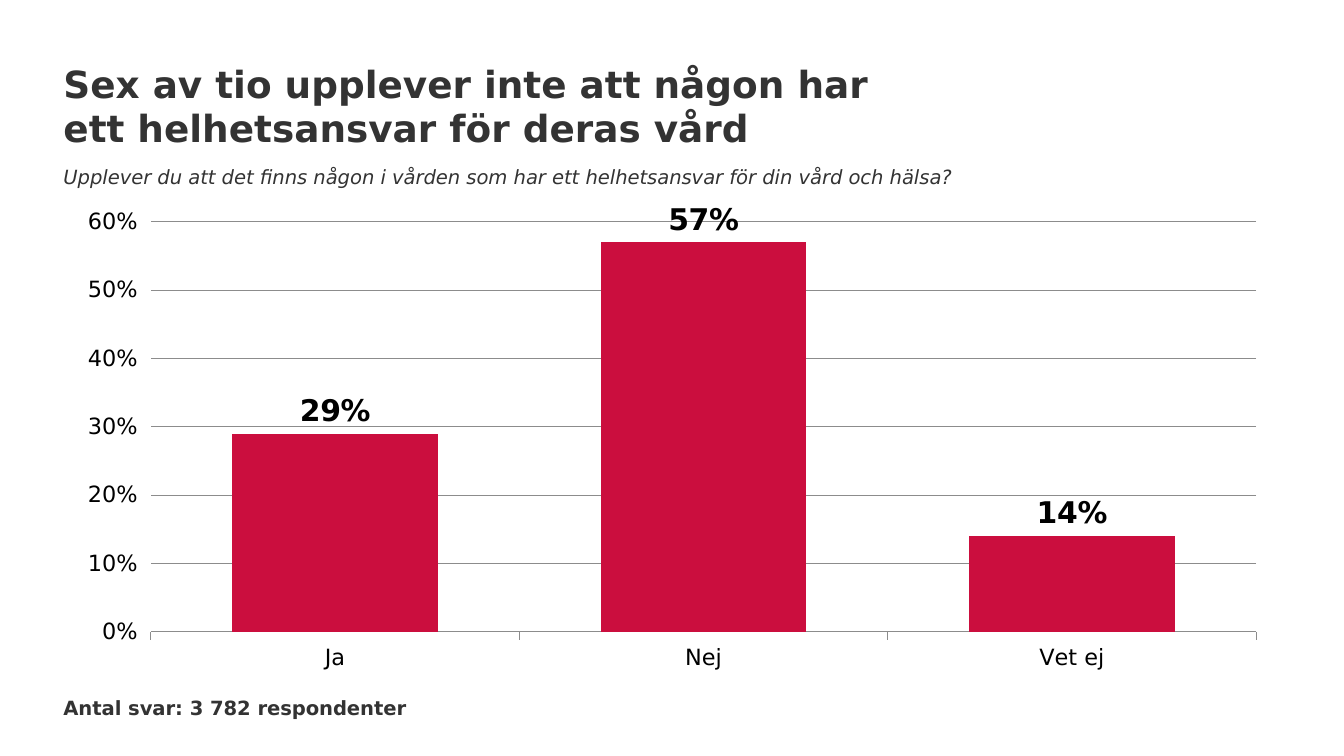
"""Build a survey slide with a column chart of perceived overall care responsibility."""
import pptx
import pptx.chart.data
import pptx.dml.color
import pptx.enum.chart
import pptx.enum.text
import pptx.util

Pt = pptx.util.Pt
RGBColor = pptx.dml.color.RGBColor

TITLE = "Sex av tio upplever inte att någon har ett helhetsansvar för deras vård"
QUESTION = "Upplever du att det finns någon i vården som har ett helhetsansvar för din vård och hälsa?"
RESPONDENTS = "Antal svar: 3 782 respondenter"
ANSWERS = {"Ja": 0.29, "Nej": 0.57, "Vet ej": 0.14}

FONT = "DejaVu Sans"
INK = RGBColor(0x33, 0x33, 0x33)
BLACK = RGBColor(0, 0, 0)
RED = RGBColor(0xCB, 0x0E, 0x3E)
GRAY = RGBColor(0x8C, 0x8C, 0x8C)
MARGIN = 34
CONTENT_WIDTH = 652


def set_font(font, size, color, bold=False, italic=False):
    font.name, font.size = FONT, Pt(size)
    font.bold, font.italic = bold, italic
    font.color.rgb = color


def set_line(line):
    line.color.rgb = GRAY
    line.width = Pt(0.5)


def write_text(box, text, top, width, size=10.5, lines=1, bold=False, italic=False):
    box.left, box.top = Pt(MARGIN), Pt(top)
    box.width, box.height = Pt(width), Pt(size * 1.2 * lines)
    frame = box.text_frame
    frame.word_wrap = True
    frame.auto_size = pptx.enum.text.MSO_AUTO_SIZE.NONE
    frame.vertical_anchor = pptx.enum.text.MSO_ANCHOR.TOP
    frame.margin_left = frame.margin_right = frame.margin_top = frame.margin_bottom = 0
    paragraph = frame.paragraphs[0]
    paragraph.alignment = pptx.enum.text.PP_ALIGN.LEFT
    paragraph.line_spacing = Pt(size * 1.2)
    span = paragraph.add_run()
    span.text = text
    set_font(span.font, size, INK, bold, italic)


def add_answer_chart(page):
    data = pptx.chart.data.CategoryChartData(number_format="0%")
    data.categories = list(ANSWERS)
    data.add_series("Series 1", list(ANSWERS.values()))
    chart = page.shapes.add_chart(
        pptx.enum.chart.XL_CHART_TYPE.COLUMN_CLUSTERED,
        Pt(MARGIN), Pt(106.5), Pt(CONTENT_WIDTH), Pt(258.5), data).chart
    chart.has_legend = chart.has_title = False
    set_font(chart.font, 12, BLACK)

    answers, shares = chart.category_axis, chart.value_axis
    for axis in (answers, shares):
        axis.major_tick_mark = pptx.enum.chart.XL_TICK_MARK.OUTSIDE
        axis.minor_tick_mark = pptx.enum.chart.XL_TICK_MARK.NONE
        set_font(axis.tick_labels.font, 12, BLACK)
    answers.tick_label_position = pptx.enum.chart.XL_TICK_LABEL_POSITION.LOW
    answers.crosses = pptx.enum.chart.XL_AXIS_CROSSES.MAXIMUM
    set_line(answers.format.line)
    shares.minimum_scale, shares.maximum_scale, shares.major_unit = 0, 0.6, 0.1
    shares.tick_labels.number_format = "0%"
    shares.tick_labels.number_format_is_linked = False
    shares.format.line.fill.background()
    set_line(shares.major_gridlines.format.line)

    plot = chart.plots[0]
    plot.gap_width = 79
    plot.vary_by_categories = False
    series = plot.series[0]
    series.format.fill.solid()
    series.format.fill.fore_color.rgb = RED
    labels = series.data_labels
    labels.show_value = True
    labels.number_format = "0%"
    labels.number_format_is_linked = False
    labels.position = pptx.enum.chart.XL_LABEL_POSITION.OUTSIDE_END
    set_font(labels.font, 16, BLACK, bold=True)


def main():
    deck = pptx.Presentation()
    deck.slide_width, deck.slide_height = Pt(720), Pt(405)
    page = deck.slides.add_slide(deck.slide_layouts[5])
    add_answer_chart(page)
    write_text(page.shapes.title, TITLE, 32.5, 457, size=20, lines=2, bold=True)
    for text, top, style in ((QUESTION, 88.5, {"italic": True}),
                             (RESPONDENTS, 373, {"bold": True})):
        box = page.shapes.add_textbox(0, 0, 0, 0)
        write_text(box, text, top, CONTENT_WIDTH, **style)
    deck.save("out.pptx")


if __name__ == "__main__":
    main()
